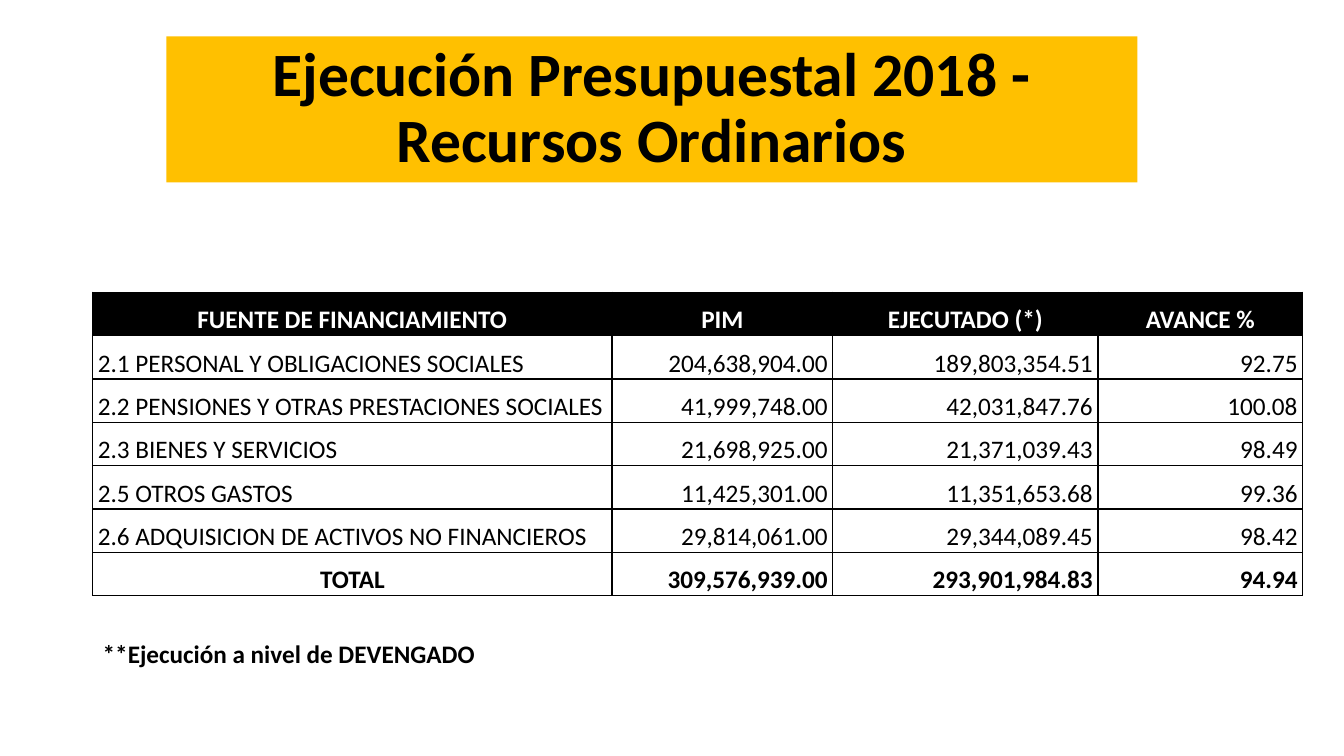
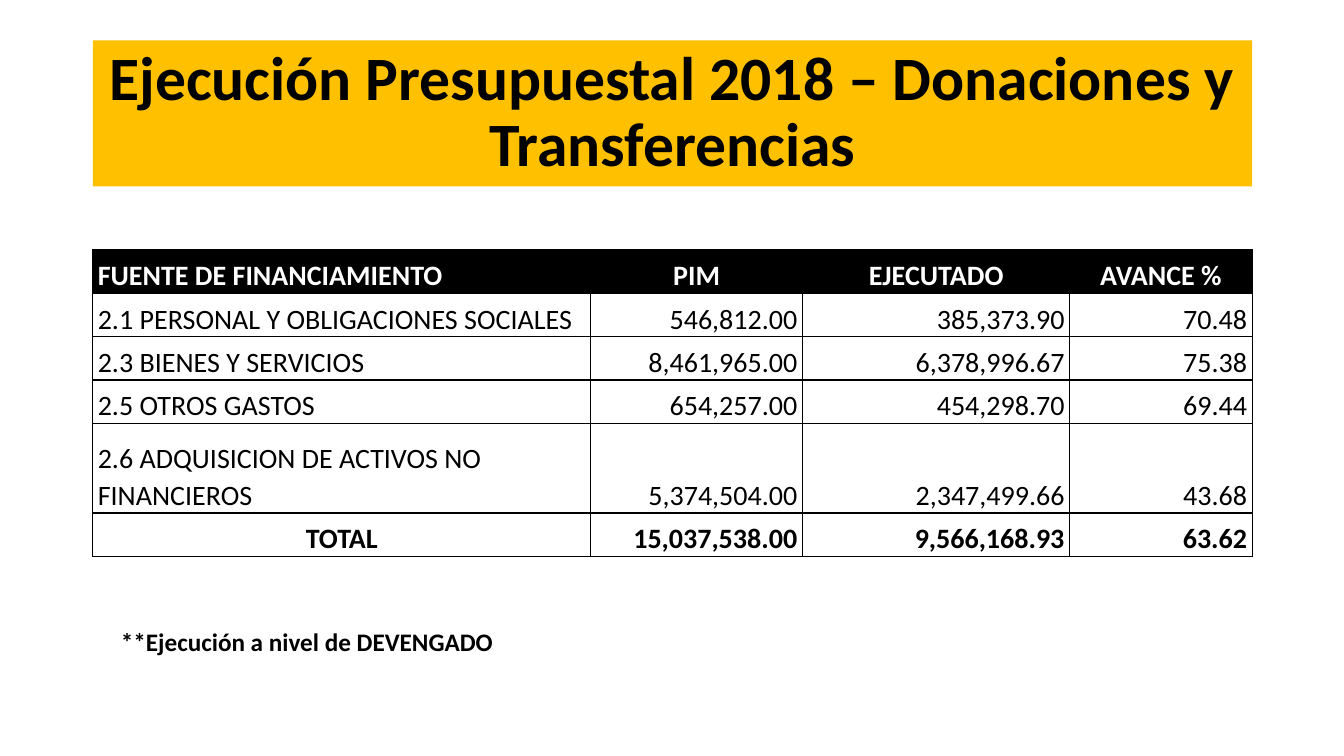
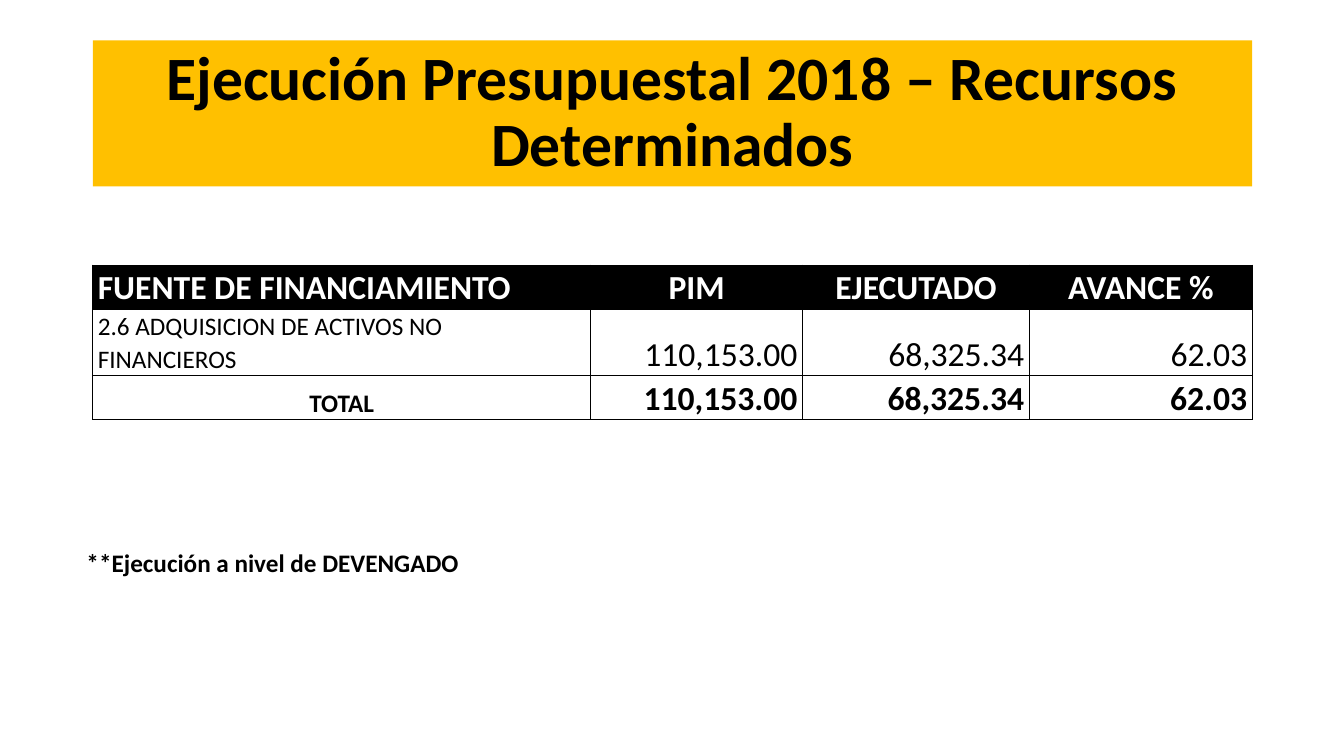
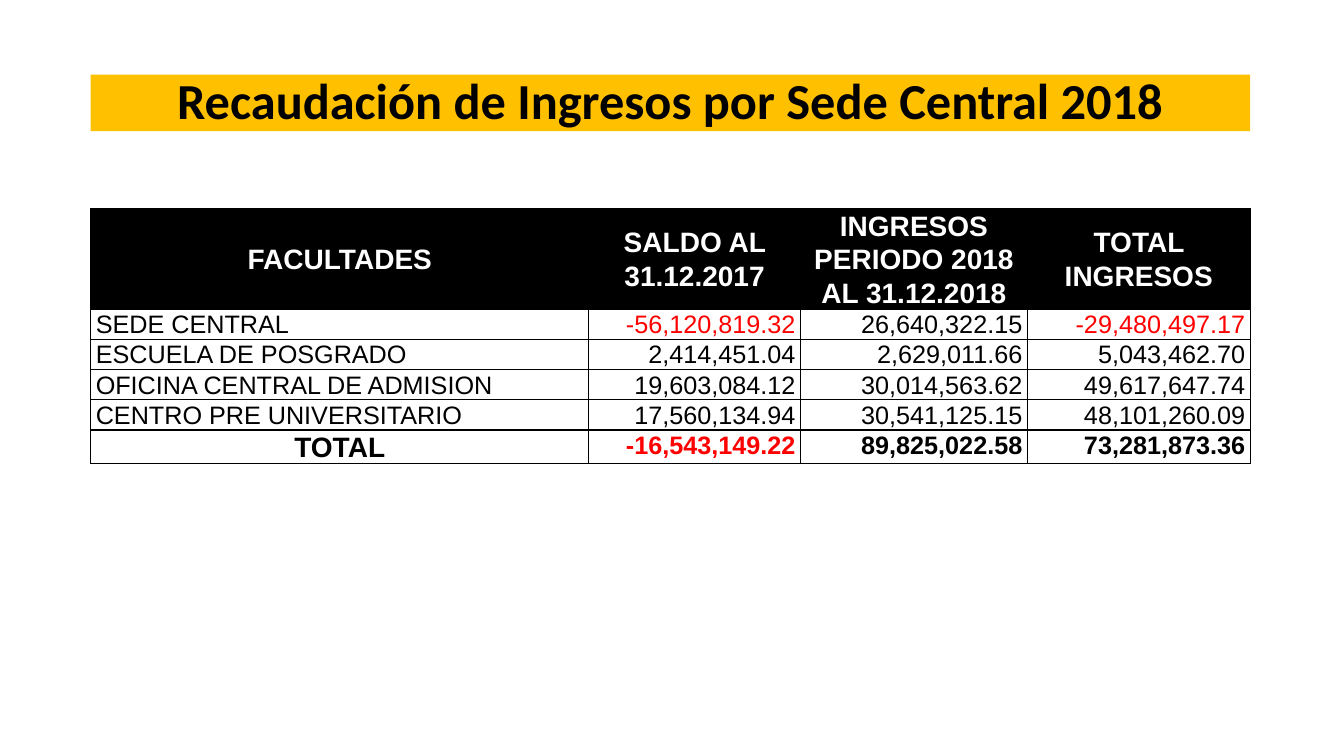
"""Build four budget slides, each with a title band, a table and an optional footnote."""
from dataclasses import dataclass

from lxml import etree
from pptx import Presentation
from pptx.dml.color import RGBColor
from pptx.enum.text import MSO_ANCHOR, MSO_AUTO_SIZE, PP_ALIGN
from pptx.oxml.ns import qn
from pptx.slide import Slide
from pptx.table import _Cell
from pptx.text.text import _Paragraph
from pptx.util import Pt

LEFT, CENTER, RIGHT = PP_ALIGN.LEFT, PP_ALIGN.CENTER, PP_ALIGN.RIGHT
TOP, MIDDLE, BOTTOM = MSO_ANCHOR.TOP, MSO_ANCHOR.MIDDLE, MSO_ANCHOR.BOTTOM
NO_FIT, FIT_SHAPE = MSO_AUTO_SIZE.NONE, MSO_AUTO_SIZE.SHAPE_TO_FIT_TEXT

EMU_PER_PX = 9144
SLIDE_W, SLIDE_H = 1333, 750
TITLE_ONLY = 5
CELL_MARGIN = 5
BLACK, WHITE, AMBER, RED = "000000", "FFFFFF", "FFC000", "FF0000"
FONT = "Calibri"
FOOTNOTE = "**Ejecución a nivel de DEVENGADO"
FOOTNOTE_W, FOOTNOTE_H = 590, 40


@dataclass(frozen=True)
class Title:
    """Title band with its box in px."""
    text: str
    box: tuple[int, int, int, int]
    size: int = 44


@dataclass(frozen=True)
class Grid:
    """Table whose first row is the header and last row the total."""
    left: int
    top: int
    cols: tuple[int, ...]
    heights: tuple[int, ...]
    rows: tuple[tuple[str, ...], ...]
    head_size: int
    value_size: int
    label_size: int
    total_size: int
    font: str = FONT
    head_align: PP_ALIGN = LEFT
    head_anchor: MSO_ANCHOR = BOTTOM
    body_anchor: MSO_ANCHOR = BOTTOM


@dataclass(frozen=True)
class Page:
    """One slide: title, table and the footnote's corner if any."""
    title: Title
    grid: Grid
    footnote: tuple[int, int] | None = None


PAGES = (
    Page(
        Title("Ejecución Presupuestal 2018 - Recursos Ordinarios", (165, 36, 963, 145)),
        Grid(
            92, 290, (515, 219, 263, 203), (43,) * 7,
            (
                ("FUENTE DE FINANCIAMIENTO", "PIM", "EJECUTADO (*)", "AVANCE %"),
                ("2.1 PERSONAL Y OBLIGACIONES SOCIALES", "204,638,904.00", "189,803,354.51", "92.75"),
                ("2.2 PENSIONES Y OTRAS PRESTACIONES SOCIALES", "41,999,748.00", "42,031,847.76", "100.08"),
                ("2.3 BIENES Y SERVICIOS", "21,698,925.00", "21,371,039.43", "98.49"),
                ("2.5 OTROS GASTOS", "11,425,301.00", "11,351,653.68", "99.36"),
                ("2.6 ADQUISICION DE ACTIVOS NO FINANCIEROS", "29,814,061.00", "29,344,089.45", "98.42"),
                ("TOTAL", "309,576,939.00", "293,901,984.83", "94.94"),
            ),
            head_size=18, value_size=18, label_size=18, total_size=18, head_align=CENTER,
        ),
        (92, 628),
    ),
    Page(
        Title("Ejecución Presupuestal 2018 – Donaciones y Transferencias", (92, 40, 1150, 145)),
        Grid(
            92, 248, (494, 210, 265, 181), (43, 43, 43, 43, 89, 43),
            (
                ("FUENTE DE FINANCIAMIENTO", "PIM", "EJECUTADO", "AVANCE %"),
                ("2.1 PERSONAL Y OBLIGACIONES SOCIALES", "546,812.00", "385,373.90", "70.48"),
                ("2.3 BIENES Y SERVICIOS", "8,461,965.00", "6,378,996.67", "75.38"),
                ("2.5 OTROS GASTOS", "654,257.00", "454,298.70", "69.44"),
                ("2.6 ADQUISICION DE ACTIVOS NO FINANCIEROS", "5,374,504.00", "2,347,499.66", "43.68"),
                ("TOTAL", "15,037,538.00", "9,566,168.93", "63.62"),
            ),
            head_size=20, value_size=20, label_size=20, total_size=20,
        ),
        (110, 616),
    ),
    Page(
        Title("Ejecución Presupuestal 2018 – Recursos Determinados", (92, 40, 1150, 145)),
        Grid(
            92, 263, (494, 210, 225, 221), (43, 66, 43),
            (
                ("FUENTE DE FINANCIAMIENTO", "PIM", "EJECUTADO", "AVANCE %"),
                ("2.6 ADQUISICION DE ACTIVOS NO FINANCIEROS", "110,153.00", "68,325.34", "62.03"),
                ("TOTAL", "110,153.00", "68,325.34", "62.03"),
            ),
            head_size=24, value_size=24, label_size=18, total_size=18,
        ),
        (76, 538),
    ),
    Page(
        Title("Recaudación de Ingresos por Sede Central 2018", (90, 74, 1150, 56), 36),
        Grid(
            90, 207, (494, 210, 225, 221), (99, 30, 30, 30, 30, 33),
            (
                ("FACULTADES", "SALDO AL 31.12.2017", "INGRESOS PERIODO 2018 AL 31.12.2018", "TOTAL INGRESOS"),
                ("SEDE CENTRAL", "-56,120,819.32", "26,640,322.15", "-29,480,497.17"),
                ("ESCUELA DE POSGRADO", "2,414,451.04", "2,629,011.66", "5,043,462.70"),
                ("OFICINA CENTRAL DE ADMISION", "19,603,084.12", "30,014,563.62", "49,617,647.74"),
                ("CENTRO PRE UNIVERSITARIO", "17,560,134.94", "30,541,125.15", "48,101,260.09"),
                ("TOTAL", "-16,543,149.22", "89,825,022.58", "73,281,873.36"),
            ),
            head_size=20, value_size=18, label_size=18, total_size=20, font="Arial",
            head_align=CENTER, head_anchor=MIDDLE, body_anchor=TOP,
        ),
    ),
)


def px(n: int) -> int:
    """Turn px into EMU."""
    return n * EMU_PER_PX


def rgb(value: str) -> RGBColor:
    """Turn a hex string into a colour."""
    return RGBColor.from_string(value)


def style(p: _Paragraph, size: int, color: str = BLACK, bold: bool = True, font: str = FONT) -> None:
    """Set the font of a paragraph."""
    f = p.font
    f.name, f.size, f.bold = font, Pt(size), bold
    f.color.rgb = rgb(color)


def add_title(s: Slide, title: Title) -> None:
    """Place and format the title placeholder as a band."""
    sp = s.shapes.title
    sp.left, sp.top, sp.width, sp.height = map(px, title.box)
    sp.fill.solid()
    sp.fill.fore_color.rgb = rgb(AMBER)
    tf = sp.text_frame
    tf.text = title.text
    tf.word_wrap, tf.auto_size, tf.vertical_anchor = True, NO_FIT, MIDDLE
    p = tf.paragraphs[0]
    p.alignment, p.line_spacing = CENTER, 0.9
    style(p, title.size)


def add_borders(cell: _Cell) -> None:
    """Draw a thin black line on each side of a cell."""
    tc_pr = cell._tc.get_or_add_tcPr()
    for side in "LRTB":
        ln = etree.SubElement(tc_pr, qn(f"a:ln{side}"), w=str(Pt(1)))
        fill = etree.SubElement(ln, qn("a:solidFill"))
        etree.SubElement(fill, qn("a:srgbClr"), val=BLACK)


def fill_cell(cell: _Cell, grid: Grid, row: int, col: int) -> None:
    """Write and format one cell by its place in the grid."""
    text = grid.rows[row][col]
    head, total, label = row == 0, row == len(grid.rows) - 1, col == 0
    if head:
        size, align = grid.head_size, grid.head_align if label else CENTER
    elif label:
        size, align = (grid.total_size, CENTER) if total else (grid.label_size, LEFT)
    else:
        size, align = grid.value_size, RIGHT
    color = WHITE if head else RED if text.startswith("-") else BLACK
    add_borders(cell)
    cell.fill.solid()
    cell.fill.fore_color.rgb = rgb(BLACK if head else WHITE)
    cell.margin_left = cell.margin_right = px(CELL_MARGIN)
    cell.margin_top = cell.margin_bottom = 0
    cell.vertical_anchor = grid.head_anchor if head else grid.body_anchor
    cell.text = text
    p = cell.text_frame.paragraphs[0]
    p.alignment, p.line_spacing = align, 1.07
    style(p, size, color, head or total, grid.font)


def add_grid(s: Slide, grid: Grid) -> None:
    """Add the table."""
    box = map(px, (grid.left, grid.top, sum(grid.cols), sum(grid.heights)))
    table = s.shapes.add_table(len(grid.rows), len(grid.cols), *box).table
    table.first_row = table.horz_banding = False
    for col, width in enumerate(grid.cols):
        table.columns[col].width = px(width)
    for row, height in enumerate(grid.heights):
        table.rows[row].height = px(height)
        for col in range(len(grid.cols)):
            fill_cell(table.cell(row, col), grid, row, col)


def add_footnote(s: Slide, left: int, top: int) -> None:
    """Add the note under the table."""
    tf = s.shapes.add_textbox(*map(px, (left, top, FOOTNOTE_W, FOOTNOTE_H))).text_frame
    tf.word_wrap, tf.auto_size = True, FIT_SHAPE
    tf.text = FOOTNOTE
    style(tf.paragraphs[0], 18)


def main() -> None:
    """Build and save the presentation."""
    prs = Presentation()
    prs.slide_width, prs.slide_height = px(SLIDE_W), px(SLIDE_H)
    for page in PAGES:
        s = prs.slides.add_slide(prs.slide_layouts[TITLE_ONLY])
        add_title(s, page.title)
        add_grid(s, page.grid)
        if page.footnote:
            add_footnote(s, *page.footnote)
    prs.save("out.pptx")


if __name__ == "__main__":
    main()
